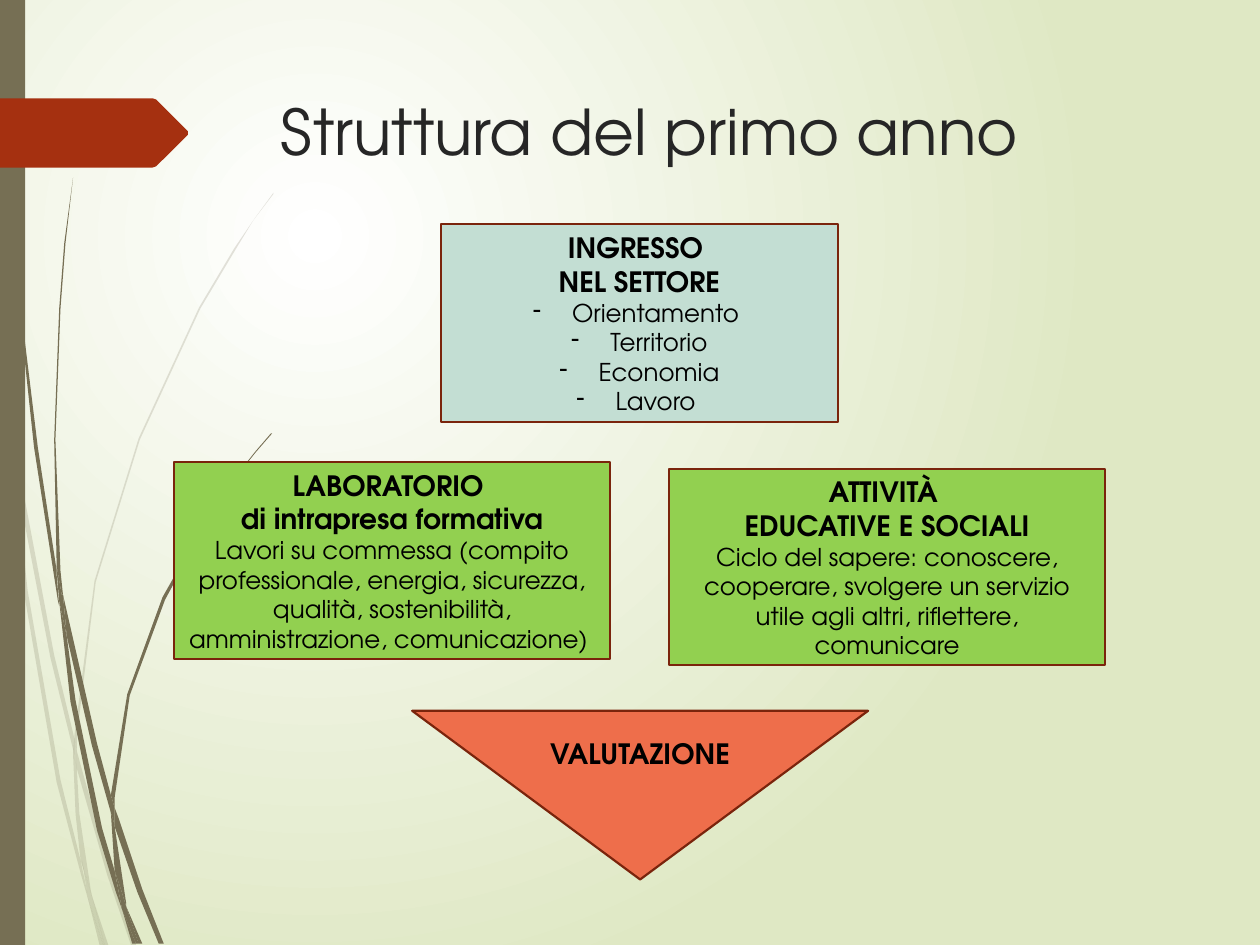
from dataclasses import dataclass

import pptx
import pptx.dml.color
import pptx.enum.shapes
import pptx.enum.text
import pptx.oxml.ns
import pptx.util
from lxml import etree

Cm = pptx.util.Cm
RGB = pptx.dml.color.RGBColor.from_string
SHAPE = pptx.enum.shapes.MSO_SHAPE
ALIGN = pptx.enum.text.PP_ALIGN
ANCHOR = pptx.enum.text.MSO_ANCHOR
qn = pptx.oxml.ns.qn


@dataclass(frozen=True)
class Theme:
    font: str = "TeX Gyre Adventor"
    title_size: int = 36
    head_size: int = 16
    body_size: int = 14
    title: str = "262626"
    text: str = "000000"
    centre: str = "FFFFFF"
    edge: str = "DFE8C4"
    stem: str = "766F54"
    flag: str = "A53010"
    border: str = "7A240C"
    entry: str = "C3DED3"
    activity: str = "92D050"
    outcome: str = "EE6E4B"


THEME = Theme()
GRID = Cm(2.54) / 100  # unit of the outline points below

# Outlines of the grass stems, as x, y points
PALE_STEMS = [
    [(8, 350), (6, 322), (0, 282), (0, 299), (7, 344)],
    [(40, 522), (59, 599), (59, 586), (43, 520), (10, 345), (12, 376)],
    [(64, 607), (61, 596), (61, 610), (85, 694), (104, 750), (108, 750), (88, 692)],
    [(83, 750), (86, 750), (73, 711)],
    [(64, 683), (48, 619), (22, 469), (12, 376), (8, 350), (19, 470), (45, 621),
     (64, 693), (70, 714), (69, 707)],
    [(58, 599), (60, 646), (64, 683), (67, 692), (73, 711), (72, 706), (63, 646),
     (61, 610), (61, 608)],
    [(61, 584), (76, 462), (111, 349), (159, 245), (187, 198), (201, 175), (217, 154),
     (217, 153), (201, 175), (186, 197), (158, 244), (110, 348), (75, 461), (59, 584),
     (59, 586), (61, 596)],
    [(70, 714), (79, 750), (82, 750)],
    [(61, 608), (61, 610), (61, 596), (59, 586), (58, 599)],
    [(67, 692), (65, 683), (69, 707), (70, 714), (82, 750), (83, 750), (73, 711)],
]
DARK_STEMS = [
    [(5, 110), (14, 233), (27, 355), (46, 477), (47, 481), (45, 457), (45, 453),
     (30, 355), (15, 232), (6, 109), (4, 48), (3, 0), (2, 0), (3, 48)],
    [(73, 592), (88, 645), (88, 633), (88, 631), (77, 590), (50, 472), (53, 505)],
    [(94, 649), (91, 641), (91, 656), (109, 708), (126, 749), (130, 749), (113, 706)],
    [(91, 691), (81, 657), (60, 556), (53, 505), (47, 477), (56, 557), (77, 659),
     (92, 708), (97, 722), (96, 717)],
    [(50, 472), (48, 453), (44, 349), (48, 245), (52, 193), (58, 141), (51, 193),
     (47, 245), (43, 349), (45, 449), (49, 472)],
    [(110, 749), (113, 749), (100, 719)],
    [(47, 477), (53, 505), (50, 472), (49, 472), (45, 449), (45, 453)],
    [(91, 633), (103, 552), (131, 476), (169, 406), (191, 374), (203, 359), (216, 344),
     (215, 344), (203, 358), (191, 373), (168, 405), (129, 474), (101, 551), (88, 631),
     (91, 641)],
    [(97, 722), (105, 749), (108, 749)],
    [(88, 645), (91, 691), (96, 706), (100, 719), (100, 716), (91, 656), (90, 651)],
    [(88, 645), (90, 651), (91, 656), (91, 641), (88, 631), (88, 633)],
    [(96, 706), (91, 691), (96, 717), (97, 722), (108, 749), (110, 749), (100, 719)],
]
FLAG = [(149, 107), (124, 132), (121, 133), (0, 133), (0, 78), (121, 78), (124, 79),
        (149, 104)]


def set_background(s):
    """Radial gradient whose centre is a quarter in from the top left corner."""
    fill = s.background.fill
    fill.gradient()
    for stop, color in zip(fill.gradient_stops, (THEME.centre, THEME.edge)):
        stop.color.rgb = RGB(color)
    grad = s.element.find(".//" + qn("a:gradFill"))
    grad.remove(grad.find(qn("a:lin")))
    shade = etree.SubElement(grad, qn("a:path"), {"path": "circle"})
    etree.SubElement(shade, qn("a:fillToRect"),
                     {"l": "50000", "t": "50000", "r": "100000", "b": "100000"})


def paint(sp, color, border=None, opacity=100):
    sp.shadow.inherit = False
    sp.fill.solid()
    sp.fill.fore_color.rgb = RGB(color)
    if opacity < 100:
        clr = sp.element.spPr.find(".//" + qn("a:srgbClr"))
        etree.SubElement(clr, qn("a:alpha"), {"val": str(opacity * 1000)})
    if border:
        sp.line.color.rgb = RGB(border)
        sp.line.width = pptx.util.Pt(1.25)
    else:
        sp.line.fill.background()


def add_outline(shapes, points, color, opacity=100):
    builder = shapes.build_freeform(*points[0], scale=GRID)
    builder.add_line_segments(points[1:], close=True)
    paint(builder.convert_to_shape(), color, opacity=opacity)


def add_text(tf, text, size, color=THEME.text, bold=False, align=ALIGN.CENTER, bullet=None):
    """Write one paragraph, using the frame's first one while it is empty."""
    first = tf.paragraphs[0]
    p = tf.add_paragraph() if first.runs else first
    p.alignment = align
    if bullet:
        pPr = p._p.get_or_add_pPr()
        pPr.set("marL", str(Cm(0.79)))
        pPr.set("indent", str(-Cm(0.79)))
        etree.SubElement(pPr, qn("a:buChar"), {"char": bullet})
    r = p.add_run()
    r.text = text
    r.font.name = THEME.font
    r.font.size = pptx.util.Pt(size)
    r.font.bold = bold
    r.font.color.rgb = RGB(color)


def add_title(s, text):
    sp = s.shapes.title
    sp.left, sp.top, sp.width, sp.height = Cm(5.41), Cm(1.73), Cm(18.31), Cm(3.56)
    tf = sp.text_frame
    tf.word_wrap = True
    tf.auto_size = pptx.enum.text.MSO_AUTO_SIZE.NONE
    tf.vertical_anchor = ANCHOR.TOP
    add_text(tf, text, THEME.title_size, THEME.title, align=ALIGN.LEFT)


def add_step(s, kind, box, color, heads, body=(), bullet=None):
    """Bordered shape with bold heading lines above plain body lines."""
    sp = s.shapes.add_shape(kind, *map(Cm, box))
    paint(sp, color, THEME.border)
    tf = sp.text_frame
    tf.word_wrap = True
    tf.vertical_anchor = ANCHOR.MIDDLE
    for text in heads:
        add_text(tf, text, THEME.head_size, bold=True)
    for text in body:
        add_text(tf, text, THEME.body_size, bullet=bullet)


def add_decoration(s):
    for stems, opacity in ((PALE_STEMS, 20), (DARK_STEMS, 100)):
        group = s.shapes.add_group_shape()
        for points in stems:
            add_outline(group.shapes, points, THEME.stem, opacity)
    band = s.shapes.add_shape(SHAPE.RECTANGLE, 0, 0, Cm(0.51), Cm(19.05))
    paint(band, THEME.stem)
    add_outline(s.shapes, FLAG, THEME.flag)


def main():
    prs = pptx.Presentation()
    prs.slide_width, prs.slide_height = Cm(25.4), Cm(19.05)
    s = prs.slides.add_slide(prs.slide_layouts[5])
    set_background(s)
    add_decoration(s)
    add_title(s, "Struttura del primo anno")
    process = SHAPE.FLOWCHART_PROCESS
    add_step(s, process, (8.89, 4.52, 8, 3.99), THEME.entry,
             ["INGRESSO ", "NEL SETTORE"],
             ["Orientamento ", "Territorio", "Economia", "Lavoro "], bullet="-")
    add_step(s, process, (3.51, 9.32, 8.79, 3.96), THEME.activity,
             ["LABORATORIO ", "di intrapresa formativa"],
             ["Lavori su commessa (compito professionale, energia, sicurezza, qualità, "
              "sostenibilità, amministrazione, comunicazione) "])
    add_step(s, process, (13.49, 9.45, 8.79, 3.96), THEME.activity,
             ["ATTIVITÀ ", "EDUCATIVE E SOCIALI"],
             ["Ciclo del sapere: conoscere, cooperare, svolgere un servizio utile agli "
              "altri, riflettere, comunicare"])
    add_step(s, SHAPE.FLOWCHART_MERGE, (8.31, 14.33, 9.19, 3.4), THEME.outcome,
             ["VALUTAZIONE"])
    prs.save("out.pptx")


if __name__ == "__main__":
    main()
